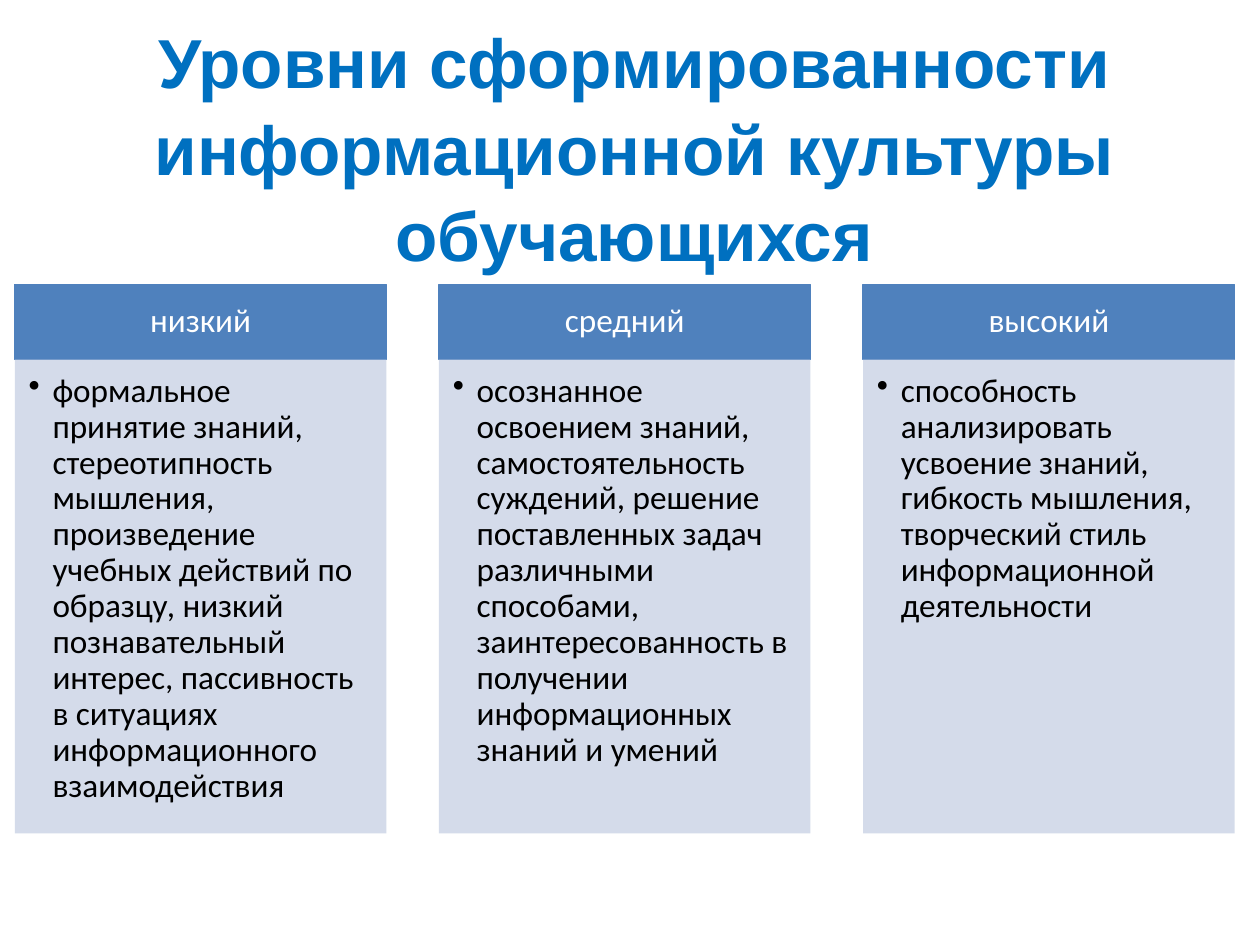
from dataclasses import dataclass

from lxml.etree import SubElement
from pptx import Presentation
from pptx.dml.color import RGBColor
from pptx.enum.shapes import MSO_SHAPE
from pptx.enum.text import MSO_ANCHOR, PP_ALIGN
from pptx.oxml.ns import qn
from pptx.util import Cm, Pt

COLORS = {
    "title": "0070C0",
    "head": "4F81BD",
    "body": "D0D8E8",
    "white": "FFFFFF",
    "black": "000000",
}
LEFT, STEP, WIDTH = 0.3, 8.55, 7.49
TOP, HEAD, BODY = 5.74, 1.51, 9.55


@dataclass
class Level:
    name: str
    text: str


LEVELS = [
    Level("низкий", "формальное принятие знаний, стереотипность мышления, "
          "произведение учебных действий по образцу, низкий познавательный "
          "интерес, пассивность в ситуациях информационного взаимодействия"),
    Level("средний", "осознанное освоением знаний, самостоятельность суждений, "
          "решение поставленных задач различными способами, "
          "заинтересованность в получении информационных знаний и умений"),
    Level("высокий", "способность анализировать усвоение знаний, гибкость "
          "мышления, творческий стиль информационной деятельности"),
]


def rgb(name: str) -> RGBColor:
    return RGBColor.from_string(COLORS[name])


def write(shape, text: str, *, size: float = 19, font: str = "Calibri",
          color: str = "black", bold: bool = False, align=PP_ALIGN.LEFT,
          anchor=MSO_ANCHOR.TOP, pad=(0.25, 0.13, 0.25, 0.13),
          space: float = 0.9, bullet: bool = False, edge: str = "") -> None:
    frame = shape.text_frame
    frame.word_wrap = True
    frame.vertical_anchor = anchor
    (frame.margin_left, frame.margin_top,
     frame.margin_right, frame.margin_bottom) = map(Cm, pad)
    para = frame.paragraphs[0]
    para.alignment = align
    para.line_spacing = space
    if bullet:
        props = para._p.get_or_add_pPr()
        props.set("marL", str(Cm(0.48)))
        props.set("indent", str(Cm(-0.48)))
        SubElement(props, qn("a:buChar"), char="•")
    run = para.add_run()
    run.text = text
    run.font.size = Pt(size)
    run.font.name = font
    run.font.bold = bold
    run.font.color.rgb = rgb(color)
    if edge:
        props = run._r.get_or_add_rPr()
        line = SubElement(props, qn("a:ln"), w=str(Pt(1.4)))
        fill = SubElement(line, qn("a:solidFill"))
        SubElement(fill, qn("a:srgbClr"), val=COLORS[edge])
        props.insert(0, line)


def panel(slide, left: float, top: float, height: float, color: str):
    shape = slide.shapes.add_shape(MSO_SHAPE.RECTANGLE, Cm(left), Cm(top),
                                   Cm(WIDTH), Cm(height))
    shape.shadow.inherit = False
    shape.fill.solid()
    shape.fill.fore_color.rgb = rgb(color)
    return shape


def column(slide, left: float, level: Level) -> None:
    head = panel(slide, left, TOP, HEAD, "head")
    head.line.color.rgb = rgb("head")
    head.line.width = Pt(0.75)
    write(head, level.name, color="white", align=PP_ALIGN.CENTER,
          anchor=MSO_ANCHOR.MIDDLE, pad=(0.38, 0.2, 0.38, 0.2))
    body = panel(slide, left, TOP + HEAD, BODY, "body")
    body.line.fill.background()
    tint = body._element.spPr.find(qn("a:solidFill"))[0]
    SubElement(tint, qn("a:alpha"), val="90000")
    write(body, level.text, bullet=True, pad=(0.28, 0.28, 0.38, 0.43))


def main() -> None:
    deck = Presentation()
    deck.slide_width, deck.slide_height = Cm(25.4), Cm(19.05)
    slide = deck.slides.add_slide(deck.slide_layouts[6])
    title = slide.shapes.add_textbox(Cm(1.27), Cm(0.76), Cm(23.04), Cm(4.37))
    write(title, "Уровни сформированности информационной культуры обучающихся",
          size=39.6, font="Arial", color="title", bold=True, space=1.04,
          align=PP_ALIGN.CENTER, anchor=MSO_ANCHOR.MIDDLE, edge="white")
    for spot, level in enumerate(LEVELS):
        column(slide, LEFT + spot * STEP, level)
    deck.save("out.pptx")


if __name__ == "__main__":
    main()
